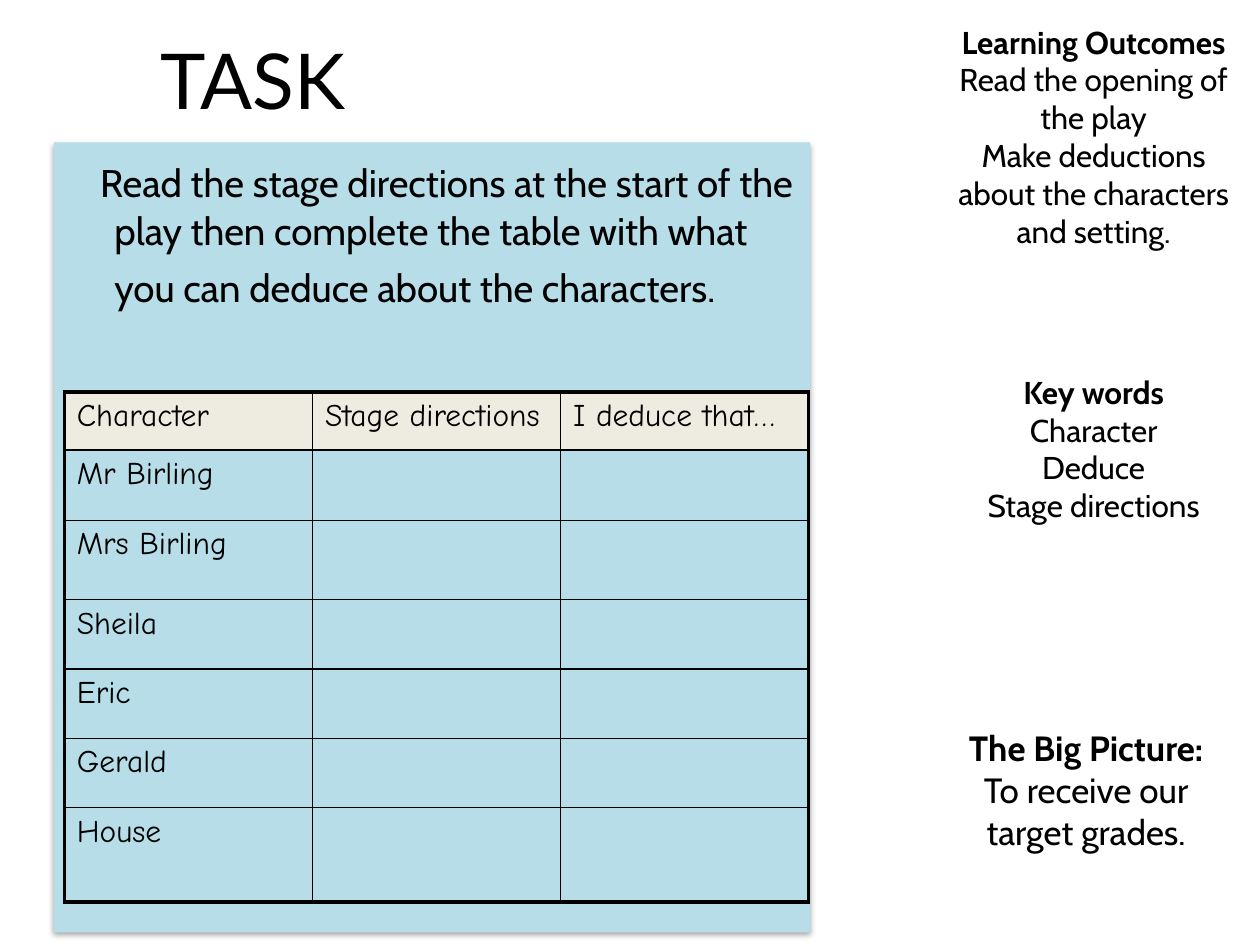
from lxml.etree import SubElement as Sub
from pptx import Presentation
from pptx.dml.color import RGBColor
from pptx.enum.shapes import MSO_SHAPE as Kind
from pptx.enum.text import MSO_ANCHOR as Anchor, MSO_AUTO_SIZE as Fit, PP_ALIGN as Align
from pptx.oxml.ns import qn
from pptx.util import Inches, Pt

BLACK = RGBColor(0x00, 0x00, 0x00)
BLUE = RGBColor(0xB7, 0xDE, 0xE8)
CREAM = RGBColor(0xEE, 0xEC, 0xE1)

SIDE = [
    (5.72, 2.52, 1.11, 20, ["The Big Picture:", "To receive our target grades."]),
    (0.13, 2.64, 1.92, 18, [
        "Learning Outcomes", "Read the opening of the play",
        "Make deductions about the characters and setting."]),
    (2.91, 2.64, 1.31, 18, ["Key words", "Character", "Deduce", "Stage directions"]),
]
HEADS = ["Character", "Stage directions", "I deduce that…"]
ROWS = [("Mr Birling", 0.56), ("Mrs Birling", 0.63), ("Sheila", 0.55),
        ("Eric", 0.55), ("Gerald", 0.55), ("House", 0.75)]
TASK = ("Read the stage directions at the start of the play then complete "
        "the table with what you can deduce about the characters.")


def add_black(node):
    """Add a solid or shadow colour to an XML node and return it."""
    return Sub(node, qn("a:srgbClr"), val=str(BLACK))


class Page:
    def __init__(self, slide, face):
        self.slide = slide
        self.face = face

    def add_run(self, para, text, size, **extra):
        run = para.add_run()
        run.text = text
        form = {"name": self.face, "size": Pt(size), **extra}
        for key, val in form.items():
            setattr(run.font, key, val)
        run.font.color.rgb = BLACK

    def text(self, box, size, lines, bold=False, **frame):
        """Add centred lines, the first of them bold if asked."""
        body = self.slide.shapes.add_textbox(*map(Inches, box)).text_frame
        body.word_wrap = True
        for key, val in frame.items():
            setattr(body, key, val)
        for i, line in enumerate(lines):
            para = body.add_paragraph() if i else body.paragraphs[0]
            para.alignment = Align.CENTER
            self.add_run(para, line, size, bold=bold and i == 0)

    def panel(self, box, text):
        shape = self.slide.shapes.add_shape(Kind.RECTANGLE, *map(Inches, box))
        shape.fill.solid()
        shape.fill.fore_color.rgb = BLUE
        shape.line.fill.background()
        shape.shadow.inherit = False
        glow = Sub(shape._element.spPr.find(qn("a:effectLst")), qn("a:outerShdw"),
                   blurRad=str(Pt(3.1)), dist=str(Pt(1.8)), dir="5400000",
                   rotWithShape="0")
        Sub(add_black(glow), qn("a:alpha"), val="35000")
        body = shape.text_frame
        body.word_wrap = True
        body.vertical_anchor = Anchor.TOP
        para = body.paragraphs[0]
        para.alignment = Align.LEFT
        props = para._p.get_or_add_pPr()
        props.set("marL", str(Inches(0.38)))
        props.set("indent", str(Inches(-0.2)))
        for part, size in ((" ", 28), (text, 22), (" ", 28)):
            self.add_run(para, part, size)

    def border(self, cell, widths):
        props = cell._tc.get_or_add_tcPr()
        for side, width in zip("LRTB", widths):
            line = Sub(props, qn(f"a:ln{side}"), w=str(Pt(width)))
            add_black(Sub(line, qn("a:solidFill")))

    def table(self, left, top, width, heads, rows, head=0.46):
        """Add a ruled grid with thick outer edges and a filled head row."""
        highs = [head] + [high for _, high in rows]
        words = [heads] + [(name, "", "") for name, _ in rows]
        box = left, top, width * len(heads), sum(highs)
        grid = self.slide.shapes.add_table(
            len(words), len(heads), *map(Inches, box)).table
        grid.first_row = grid.horz_banding = False
        for col in grid.columns:
            col.width = Inches(width)
        for r, (high, line) in enumerate(zip(highs, words)):
            grid.rows[r].height = Inches(high)
            for c, word in enumerate(line):
                cell = grid.cell(r, c)
                edges = (c == 0, c == len(heads) - 1, r == 0, r == len(rows))
                self.border(cell, [2.25 if edge else 1 for edge in edges])
                if r == 0:
                    cell.fill.solid()
                    cell.fill.fore_color.rgb = CREAM
                else:
                    cell.fill.background()
                if word:
                    self.add_run(cell.text_frame.paragraphs[0], word, 18,
                                 name="Comic Neue")


def main():
    deck = Presentation()
    deck.slide_width, deck.slide_height = Inches(10), Inches(7.5)
    slide = deck.slides.add_slide(deck.slide_layouts[6])
    page = Page(slide, "Cabin")
    page.panel((0.43, 1.13, 6, 6.27), TASK)
    page.table(0.51, 3.11, 1.97, HEADS, ROWS)
    for top, width, high, size, lines in SIDE:
        page.text((7.36, top, width, high), size, lines, bold=True,
                  auto_size=Fit.SHAPE_TO_FIT_TEXT)
    page.face = "Lato"
    page.text((0.43, 0, 3.16, 1.25), 44, ["TASK"], vertical_anchor=Anchor.MIDDLE)
    deck.save("out.pptx")


if __name__ == "__main__":
    main()
